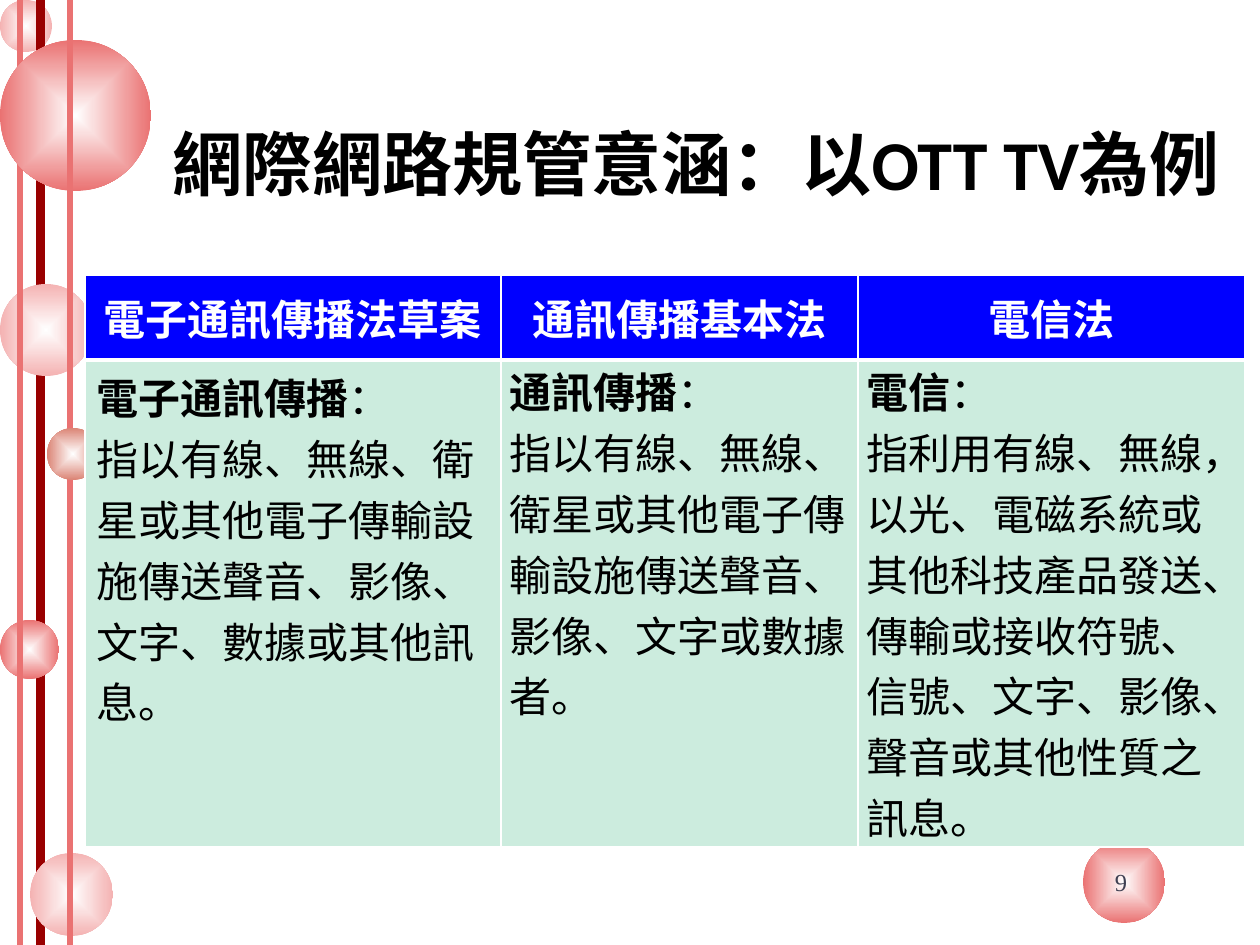
from lxml import etree
from pptx import Presentation
from pptx import util as u
from pptx.dml.color import RGBColor
from pptx.enum import shapes, text
from pptx.oxml.ns import qn

PX_PER_INCH = 126
SERIF, SANS = "Times New Roman", "Calibri"
WHITE, BLACK, PINK, PALE, CLAY = "FFFFFF", "000000", "EA7272", "F4B2B2", "DB8475"
DARK_RED, BLUE, MINT, SLATE = "990000", "0000FF", "CCECDE", "3F4052"


def px(n):
    return u.Emu(round(n * 914400 / PX_PER_INCH))


def rgb(color):
    return RGBColor.from_string(color)


class Slide:
    def __init__(self, prs):
        self.s = prs.slides.add_slide(prs.slide_layouts[6])

    def shape(self, kind, x, y, w, h):
        sp = self.s.shapes.add_shape(kind, px(x), px(y), px(w), px(h))
        sp.shadow.inherit = False
        sp.line.fill.background()
        return sp

    def bar(self, x, w, color):
        sp = self.shape(shapes.MSO_SHAPE.RECTANGLE, x, 0, w, 945)
        sp.fill.solid()
        sp.fill.fore_color.rgb = rgb(color)

    def ball(self, x, y, d, color):
        """Circle with a gradient from a white centre to the colour."""
        sp = self.shape(shapes.MSO_SHAPE.OVAL, x, y, d, d)
        sp.fill.gradient()
        for stop, c in zip(sp.fill.gradient_stops, (WHITE, color)):
            stop.color.rgb = rgb(c)
        grad = sp._element.spPr.find(qn("a:gradFill"))
        grad.remove(grad.find(qn("a:lin")))
        center = etree.SubElement(grad, qn("a:path"), path="shape")
        etree.SubElement(center, qn("a:fillToRect"),
                         l="50000", t="50000", r="50000", b="50000")

    def font(self, font, size, color, name, bold=None):
        font.size, font.name, font.bold = u.Pt(size), name, bold
        font.color.rgb = rgb(color)

    def label(self, x, y, w, h, words, size, color, name, bold=False,
              align=text.PP_ALIGN.LEFT, anchor=text.MSO_ANCHOR.TOP):
        tf = self.s.shapes.add_textbox(px(x), px(y), px(w), px(h)).text_frame
        tf.word_wrap = True
        tf.vertical_anchor = anchor
        p = tf.paragraphs[0]
        p.alignment = align
        r = p.add_run()
        r.text = words
        self.font(r.font, size, color, name, bold)
        etree.SubElement(r._r.get_or_add_rPr(), qn("a:ea"), typeface=name)

    def table(self, x, y, widths, heights):
        frame = self.s.shapes.add_table(len(heights), len(widths), px(x), px(y),
                                        px(sum(widths)), px(sum(heights)))
        for col, w in zip(frame.table.columns, widths):
            col.width = px(w)
        for row, h in zip(frame.table.rows, heights):
            row.height = px(h)
        return frame.table

    def cell(self, cell, fill, bottom, margins):
        cell.fill.solid()
        cell.fill.fore_color.rgb = rgb(fill)
        cell.margin_left = cell.margin_right = px(margins[0])
        cell.margin_top = cell.margin_bottom = px(margins[1])
        tc_pr = cell._tc.get_or_add_tcPr()
        for i, (side, pt) in enumerate((("L", 1), ("R", 1), ("T", 1), ("B", bottom))):
            ln = etree.Element(qn(f"a:ln{side}"), w=str(u.Pt(pt)))
            solid = etree.SubElement(ln, qn("a:solidFill"))
            etree.SubElement(solid, qn("a:srgbClr"), val=WHITE)
            tc_pr.insert(i, ln)

    def header(self, cell, words):
        self.cell(cell, BLUE, 3, (9, 0))
        cell.vertical_anchor = text.MSO_ANCHOR.MIDDLE
        p = cell.text_frame.paragraphs[0]
        p.alignment = text.PP_ALIGN.CENTER
        r = p.add_run()
        r.text = words
        self.font(r.font, 24, WHITE, SERIF, True)

    def definition(self, cell, term, meaning, margins):
        self.cell(cell, MINT, 1, margins)
        tf = cell.text_frame
        lines = [[(term, True), ("：", False)], [(meaning, False)]]
        for p, runs in zip((tf.paragraphs[0], tf.add_paragraph()), lines):
            p.line_spacing = u.Pt(34.8)
            for words, bold in runs:
                r = p.add_run()
                r.text = words
                self.font(r.font, 24, BLACK, SERIF, bold)


def main():
    prs = Presentation()
    prs.slide_width, prs.slide_height = px(1260), px(945)
    s = Slide(prs)

    # Bars and balls down the left edge, and the ball under the page number
    s.ball(1083, 841, 82, PINK)
    s.ball(0, 0, 52, PALE)
    s.bar(36, 9, DARK_RED)
    s.ball(0, 284, 92, PALE)
    s.ball(0, 620, 59, PINK)
    s.bar(17, 6, PINK)
    s.ball(0, 40, 151, PINK)
    s.ball(30, 853, 83, PALE)
    s.bar(67, 6, PINK)
    s.ball(47, 428, 52, CLAY)

    # Title
    s.label(160, 84, 1075, 158, "網際網路規管意涵：以OTT TV為例", 40, BLACK, SANS,
            bold=True, anchor=text.MSO_ANCHOR.MIDDLE)

    # Comparison of the three laws
    laws = [
        ("電子通訊傳播法草案", "電子通訊傳播",
         "指以有線、無線、衛星或其他電子傳輸設施傳送聲音、影像、文字、數據或其他訊息。", (12, 6)),
        ("通訊傳播基本法", "通訊傳播",
         "指以有線、無線、衛星或其他電子傳輸設施傳送聲音、影像、文字或數據者。", (9, 0)),
        ("電信法", "電信",
         "指利用有線、無線，以光、電磁系統或其他科技產品發送、傳輸或接收符號、信號、"
         "文字、影像、聲音或其他性質之訊息。", (9, 0)),
    ]
    table = s.table(85, 275, (416, 357, 387), (85, 440))
    for col, (law, term, meaning, margins) in enumerate(laws):
        s.header(table.cell(0, col), law)
        s.definition(table.cell(1, col), term, meaning, margins)

    # Page number
    s.label(1077, 861, 88, 63, "9", 14, SLATE, SERIF, align=text.PP_ALIGN.CENTER)

    prs.save("out.pptx")


if __name__ == "__main__":
    main()
